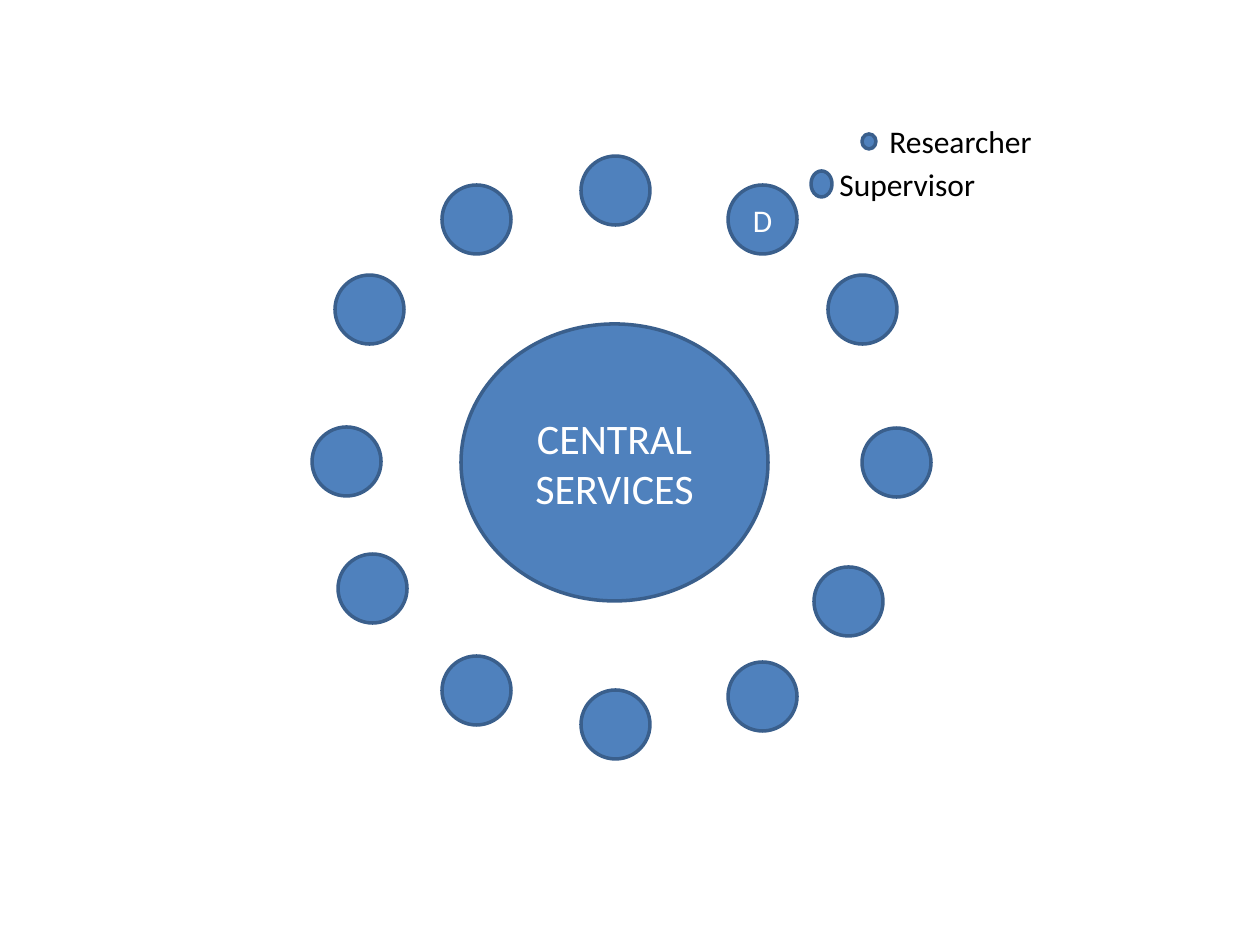
from dataclasses import dataclass

from pptx import Presentation
from pptx import util as u
from pptx.dml.color import RGBColor
from pptx.enum import shapes, text

PX = 914400 / 126
FONT = "Calibri"
COLORS = {"fill": "4F81BD", "line": "3A5F8C", "light": "FFFFFF", "dark": "000000"}
NODE_SIZE = 69


@dataclass(frozen=True)
class Circle:
    left: int
    top: int
    width: int = NODE_SIZE
    height: int = NODE_SIZE
    label: str = ""
    size: int = 18


@dataclass(frozen=True)
class Label:
    left: int
    top: int
    width: int
    height: int
    label: str


CIRCLES = [
    Circle(461, 324, 307, 277, "CENTRAL SERVICES", 24),
    Circle(581, 156),
    Circle(442, 185),
    Circle(728, 185, label="D"),
    Circle(728, 662),
    Circle(828, 275),
    Circle(862, 428),
    Circle(335, 275),
    Circle(338, 554),
    Circle(814, 567),
    Circle(312, 427),
    Circle(581, 690),
    Circle(442, 656),
    Circle(811, 171, 21, 26),
    Circle(862, 134, 14, 15),
]

LABELS = [
    Label(877, 116, 189, 50, "Researcher"),
    Label(827, 159, 175, 50, "Supervisor"),
]


def color(name: str) -> RGBColor:
    return RGBColor.from_string(COLORS[name])


def box(item: Circle | Label) -> list[u.Emu]:
    return [u.Emu(round(length * PX)) for length in (item.left, item.top, item.width, item.height)]


def add_run(paragraph, label: str, size: int, color_name: str) -> None:
    run = paragraph.add_run()
    run.text = label
    run.font.name = FONT
    run.font.size = u.Pt(size)
    run.font.color.rgb = color(color_name)


def draw_circle(slide, circle: Circle) -> None:
    shape = slide.shapes.add_shape(shapes.MSO_SHAPE.OVAL, *box(circle))
    shape.shadow.inherit = False
    shape.fill.solid()
    shape.fill.fore_color.rgb = color("fill")
    shape.line.color.rgb = color("line")
    shape.line.width = u.Pt(2)
    if circle.label:
        frame = shape.text_frame
        frame.word_wrap = True
        frame.vertical_anchor = text.MSO_ANCHOR.MIDDLE
        paragraph = frame.paragraphs[0]
        paragraph.alignment = text.PP_ALIGN.CENTER
        add_run(paragraph, circle.label, circle.size, "light")


def draw_label(slide, label: Label) -> None:
    frame = slide.shapes.add_textbox(*box(label)).text_frame
    frame.word_wrap = True
    frame.auto_size = text.MSO_AUTO_SIZE.SHAPE_TO_FIT_TEXT
    add_run(frame.paragraphs[0], label.label, 18, "dark")


def main() -> None:
    presentation = Presentation()
    presentation.slide_width = u.Inches(10)
    presentation.slide_height = u.Inches(7.5)
    slide = presentation.slides.add_slide(presentation.slide_layouts[6])
    for circle in CIRCLES:
        draw_circle(slide, circle)
    for label in LABELS:
        draw_label(slide, label)
    presentation.save("out.pptx")


if __name__ == "__main__":
    main()
